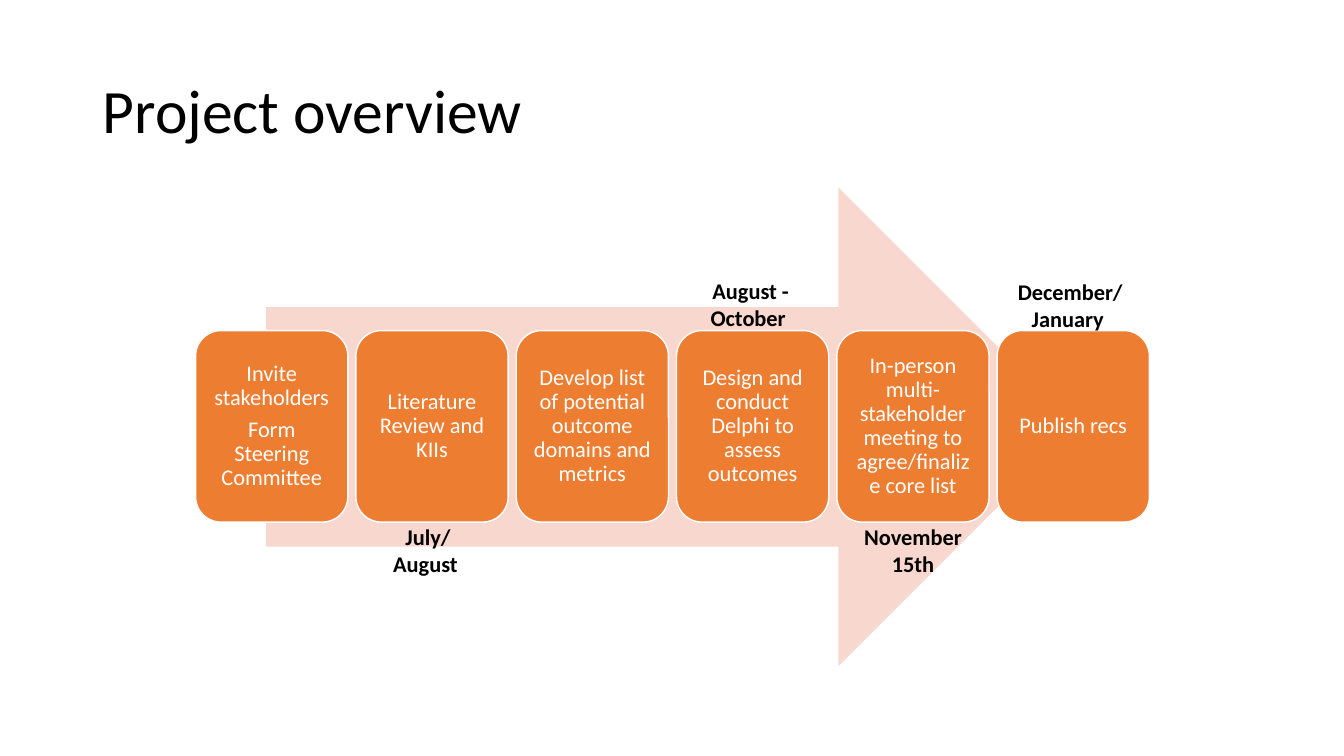
from pptx import Presentation
from pptx.dml.color import RGBColor
from pptx.enum.shapes import MSO_SHAPE as Shape
from pptx.enum.text import MSO_ANCHOR as Anchor, PP_ALIGN as Align
from pptx.util import Emu, Pt

BLACK = RGBColor(0x00, 0x00, 0x00)
WHITE = RGBColor(0xFF, 0xFF, 0xFF)
ORANGE = RGBColor(0xED, 0x7D, 0x31)
PEACH = RGBColor(0xF8, 0xD7, 0xCE)
FONT = "Calibri"

STEP_LEFT, STEP_TOP, STEP_PITCH = 194, 328, 159
STEP_WIDTH, STEP_HEIGHT = 151, 190
STEPS = [
    ["Invite stakeholders", "Form Steering Committee"],
    ["Literature Review and KIIs"],
    ["Develop list of potential outcome domains and metrics"],
    ["Design and conduct Delphi to assess outcomes"],
    ["In-person multi-stakeholder meeting to agree/finalize core list"],
    ["Publish recs"],
]
DATES = [
    (838, 514, ["November 15th"]),
    (994, 271, ["December/", "January "]),
    (357, 514, ["July/", "August "]),
    (677, 270, ["August - October "]),
]


def px(length):
    return Emu(length * 9144)


def box(*lengths):
    return [px(length) for length in lengths]


def write(frame, lines, size, color, align, bold=False, spacing=None, after=None):
    frame.word_wrap = True
    frame.text = "\n".join(lines)
    for paragraph in frame.paragraphs:
        paragraph.alignment = align
        paragraph.line_spacing = spacing
        paragraph.space_after = after
        paragraph.font.name = FONT
        paragraph.font.size = Pt(size)
        paragraph.font.bold = bold
        paragraph.font.color.rgb = color


def add_title(slide, text):
    title = slide.shapes.title
    title.left, title.top, title.width, title.height = box(92, 40, 1150, 145)
    title.text_frame.vertical_anchor = Anchor.MIDDLE
    write(title.text_frame, [text], 44, BLACK, Align.LEFT, spacing=0.9)


def add_filled(slide, preset, bounds, color):
    shape = slide.shapes.add_shape(preset, *box(*bounds))
    shape.shadow.inherit = False
    shape.fill.solid()
    shape.fill.fore_color.rgb = color
    shape.line.fill.background()
    return shape


def add_step(slide, index, lines):
    left = STEP_LEFT + index * STEP_PITCH
    step = add_filled(slide, Shape.ROUNDED_RECTANGLE,
                      (left, STEP_TOP, STEP_WIDTH, STEP_HEIGHT), ORANGE)
    step.line.color.rgb = WHITE
    step.line.width = Pt(1)
    frame = step.text_frame
    frame.margin_left = frame.margin_right = px(7)
    frame.margin_top = frame.margin_bottom = px(7)
    frame.vertical_anchor = Anchor.MIDDLE
    write(frame, lines, 16, WHITE, Align.CENTER, spacing=0.9, after=Pt(5.6))


def add_date(slide, left, top, lines):
    date = slide.shapes.add_textbox(*box(left, top, 135, 64))
    write(date.text_frame, lines, 16, BLACK, Align.CENTER, bold=True)


def main():
    deck = Presentation()
    deck.slide_width, deck.slide_height = box(1333, 750)
    slide = deck.slides.add_slide(deck.slide_layouts[5])
    add_title(slide, "Project overview")
    add_filled(slide, Shape.RIGHT_ARROW, (264, 186, 805, 475), PEACH)
    for index, lines in enumerate(STEPS):
        add_step(slide, index, lines)
    for left, top, lines in DATES:
        add_date(slide, left, top, lines)
    deck.save("out.pptx")


if __name__ == "__main__":
    main()
